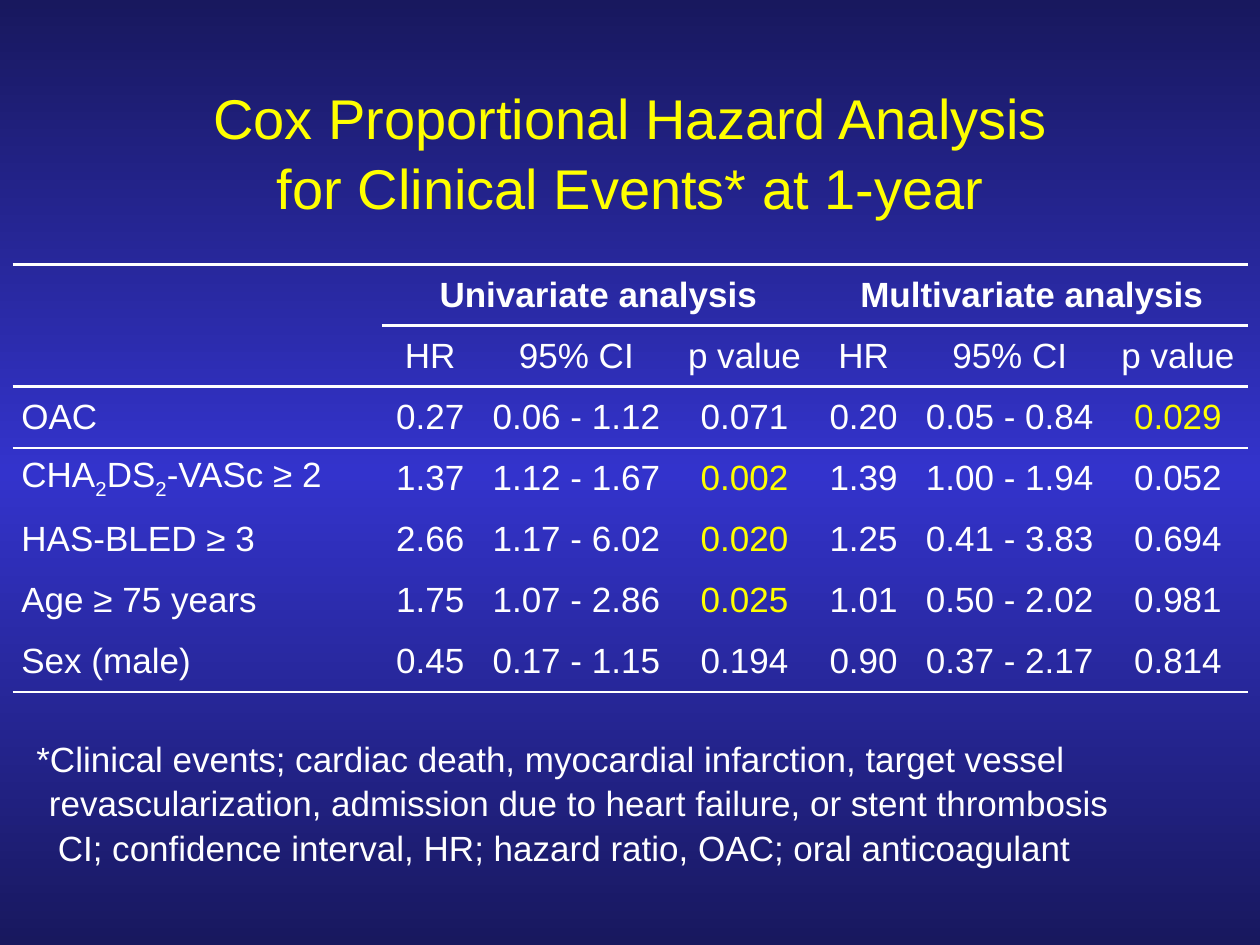
from copy import deepcopy

from lxml import etree
from pptx import Presentation
from pptx.dml.color import RGBColor
from pptx.enum.text import MSO_ANCHOR, MSO_AUTO_SIZE, PP_ALIGN
from pptx.oxml.ns import qn
from pptx.util import Inches, Pt

WHITE, YELLOW = "FFFFFF", "FFFF00"
NAVY, BLUE = "18185E", "3333CC"
NO_STYLE_NO_GRID = "{2D5ABB26-0587-4C30-8999-92F81FD0307C}"

COL_WIDTHS = [2.93] + [0.77, 1.55, 1.12] * 2
ROW_HEIGHT = 0.48
MEASURES = ["HR", "95% CI", "p value"]
# Parts between bars are subscripts
ROWS = [
    ["", "Univariate analysis", "", "", "Multivariate analysis", "", ""],
    [""] + MEASURES * 2,
    ["OAC", "0.27", "0.06 - 1.12", "0.071", "0.20", "0.05 - 0.84", "0.029"],
    ["CHA|2|DS|2|-VASc ≥ 2",
     "1.37", "1.12 - 1.67", "0.002", "1.39", "1.00 - 1.94", "0.052"],
    ["HAS-BLED ≥ 3", "2.66", "1.17 - 6.02", "0.020", "1.25", "0.41 - 3.83", "0.694"],
    ["Age ≥ 75 years", "1.75", "1.07 - 2.86", "0.025", "1.01", "0.50 - 2.02", "0.981"],
    ["Sex (male)", "0.45", "0.17 - 1.15", "0.194", "0.90", "0.37 - 2.17", "0.814"],
]
P_VALUE_COLS = (3, 6)
HEADER_ROWS = 2


def rgb(color):
    return RGBColor.from_string(color)


def format_font(font, size, color=WHITE, bold=False):
    font.name = "Arial"
    font.size = Pt(size)
    font.bold = bold
    font.color.rgb = rgb(color)


def set_background(s):
    fill = s.background.fill
    fill.gradient()
    fill.gradient_angle = 90
    stop_list = s.element.find(".//" + qn("a:gsLst"))
    stop_list.append(deepcopy(stop_list[-1]))
    for stop, (position, color) in zip(
            fill.gradient_stops, [(0, NAVY), (0.5, BLUE), (1, NAVY)]):
        stop.position = position
        stop.color.rgb = rgb(color)


def add_title(s, text):
    sp = s.shapes.title
    sp.left, sp.top = Inches(1.46), Inches(0.61)
    sp.width, sp.height = Inches(7.09), Inches(1.17)
    tf = sp.text_frame
    tf.text = text
    tf.word_wrap = True
    tf.auto_size = MSO_AUTO_SIZE.NONE
    tf.vertical_anchor = MSO_ANCHOR.MIDDLE
    p = tf.paragraphs[0]
    p.alignment = PP_ALIGN.CENTER
    p.line_spacing = 1.05
    format_font(p.runs[0].font, 32, YELLOW)


def add_footnote(s, notes):
    sp = s.shapes.add_textbox(Inches(0.19), Inches(5.79), Inches(9.61), Inches(1.11))
    tf = sp.text_frame
    tf.word_wrap = True
    for i, (text, margin, indent) in enumerate(notes):
        p = tf.paragraphs[0] if i == 0 else tf.add_paragraph()
        p.text = text
        p.line_spacing = 1.05
        pPr = p._p.get_or_add_pPr()
        pPr.set("marL", str(Inches(margin)))
        pPr.set("indent", str(Inches(indent)))
        format_font(p.runs[0].font, 20)


def set_borders(cell, tags):
    """Draw white rules on the given sides, ahead of the cell's fill."""
    tcPr = cell._tc.get_or_add_tcPr()
    for i, tag in enumerate(tags):
        ln = etree.Element(qn(tag), w=str(Pt(1.5)))
        fill = etree.SubElement(ln, qn("a:solidFill"))
        etree.SubElement(fill, qn("a:srgbClr"), val=WHITE)
        tcPr.insert(i, ln)


def fill_cell(cell, text, align, color, bold):
    cell.fill.background()
    cell.vertical_anchor = MSO_ANCHOR.MIDDLE
    cell.margin_left = cell.margin_right = Inches(0.07)
    cell.margin_top = cell.margin_bottom = 0
    if not text:
        return
    p = cell.text_frame.paragraphs[0]
    p.alignment = align
    for i, part in enumerate(text.split("|")):
        r = p.add_run()
        r.text = part
        format_font(r.font, 20, color, bold)
        if i % 2:
            r.font._element.set("baseline", "-25000")


def cell_borders(row, col):
    """Rules frame the table, the group headings and the measure row."""
    last = len(ROWS) - 1
    above = row in (0, HEADER_ROWS) or (row == 1 and col > 0)
    below = row in (1, last) or (row == 0 and col > 0)
    return ["a:lnT"] * above + ["a:lnB"] * below


def add_hazard_table(s):
    frame = s.shapes.add_table(
        len(ROWS), len(COL_WIDTHS), Inches(0.1), Inches(2.1),
        Inches(sum(COL_WIDTHS)), Inches(3.39))
    table = frame.table
    table.first_row = table.horz_banding = False
    table._tbl.tblPr.find(qn("a:tableStyleId")).text = NO_STYLE_NO_GRID
    for column, width in zip(table.columns, COL_WIDTHS):
        column.width = Inches(width)
    for row in table.rows:
        row.height = Inches(3.39 / len(ROWS))
    # Each group heading spans its three measures
    for col in (1, 4):
        table.cell(0, col).merge(table.cell(0, col + 2))

    for i, row in enumerate(ROWS):
        for j, text in enumerate(row):
            cell = table.cell(i, j)
            significant = (i >= HEADER_ROWS and j in P_VALUE_COLS
                           and float(text) < 0.05)
            fill_cell(cell, text,
                      PP_ALIGN.CENTER if j else PP_ALIGN.JUSTIFY,
                      YELLOW if significant else WHITE, bold=i == 0)
            set_borders(cell, cell_borders(i, j))


def main():
    prs = Presentation()
    prs.slide_width, prs.slide_height = Inches(10), Inches(7.5)
    s = prs.slides.add_slide(prs.slide_layouts[5])
    set_background(s)
    add_title(s, "Cox Proportional Hazard Analysis for Clinical Events* at 1-year")
    # Text, left margin, first-line indent
    add_footnote(s, [
        ("*Clinical events; cardiac death, myocardial infarction, target vessel "
         "revascularization, admission due to heart failure, or stent thrombosis",
         0.1, -0.1),
        ("CI; confidence interval, HR; hazard ratio, OAC; oral anticoagulant",
         0.17, 0),
    ])
    add_hazard_table(s)
    prs.save("out.pptx")


if __name__ == "__main__":
    main()
